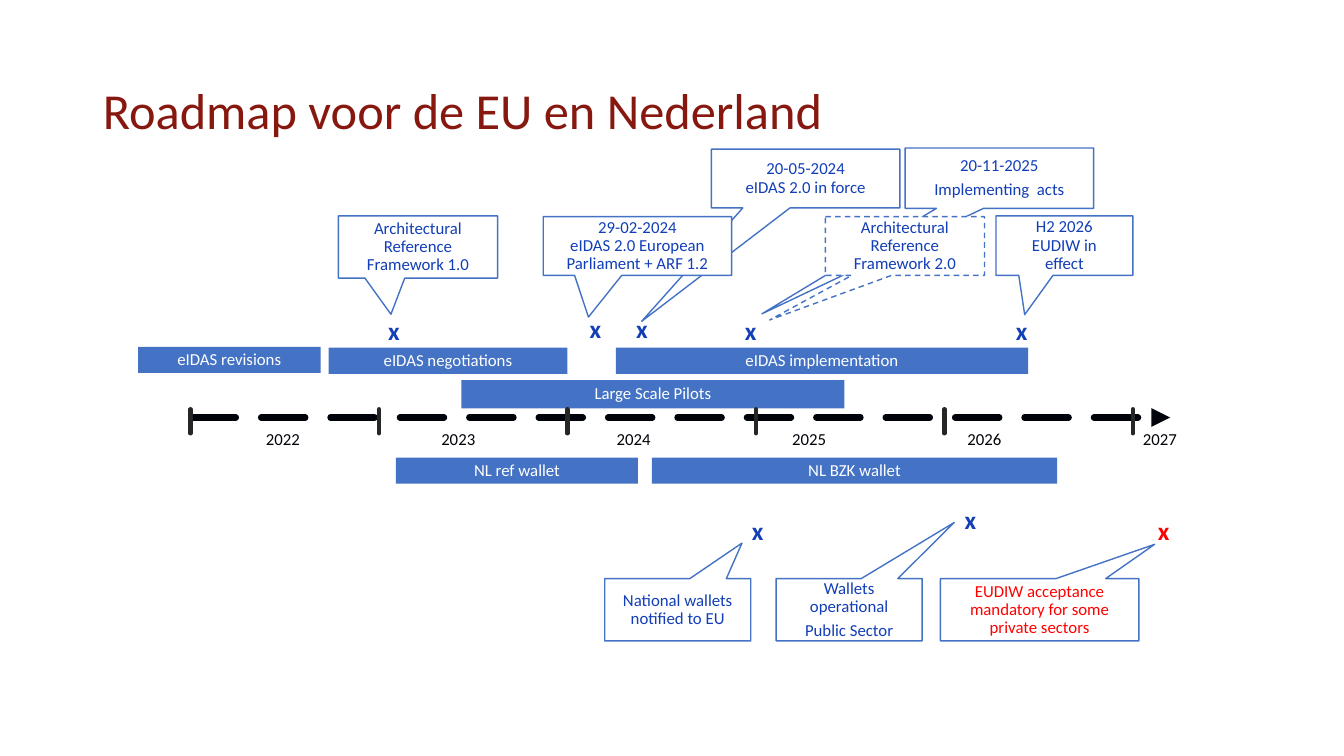
from lxml.etree import SubElement as Sub
from pptx import Presentation
from pptx.dml.color import RGBColor as Rgb
from pptx.enum.dml import MSO_LINE as Dash
from pptx.enum.shapes import MSO_CONNECTOR as Link, MSO_SHAPE as Form
from pptx.enum.text import MSO_ANCHOR as Anchor, PP_ALIGN as Align
from pptx.oxml.ns import qn
from pptx.util import Cm, Pt

HUES = {
    "title": "871810", "bar": "4472C4", "blue": "123EB7", "red": "FF0000",
    "white": "FFFFFF", "ink": "00030A", "tick": "262626",
}


class Board:
    """Holds the style and the current slide."""

    font = "Calibri"
    size = 12

    def __init__(self, slide):
        self.slide = slide
        self.shapes = slide.shapes

    def hue(self, name):
        return Rgb.from_string(HUES[name])

    def text(self, frame, text, hue, size=size, bold=False, gap=2, inset=0.0,
             align=Align.CENTER, anchor=Anchor.MIDDLE):
        frame.text = text
        frame.word_wrap = True
        frame.vertical_anchor = anchor
        frame.margin_left = frame.margin_right = Cm(inset)
        frame.margin_top = frame.margin_bottom = Cm(inset)
        for i, para in enumerate(frame.paragraphs):
            para.alignment = align
            para.line_spacing = 0.9
            para.space_before = Pt(gap if i else 0)
            para.space_after = Pt(gap)
            for run in para.runs:
                font = run.font
                font.name, font.size, font.bold = self.font, Pt(size), bold
                font.color.rgb = self.hue(hue)

    def title(self, text, *box):
        head = self.shapes.title
        head.left, head.top, head.width, head.height = map(Cm, box)
        self.text(head.text_frame, text, "title", 36, gap=0, inset=0.25,
                  align=Align.LEFT)

    def label(self, text, x, y, w, h, hue="ink", **style):
        box = self.shapes.add_textbox(Cm(x), Cm(y), Cm(w), Cm(h))
        self.text(box.text_frame, text, hue, gap=6, anchor=Anchor.TOP, **style)

    def mark(self, x, y, hue="blue"):
        self.label("x", x, y, 0.1, 0.1, hue, size=18, bold=True)

    def shape(self, form, text, box, hue, fill=None):
        item = self.shapes.add_shape(form, *map(Cm, box))
        item.shadow.inherit = False
        if fill:
            item.fill.solid()
            item.fill.fore_color.rgb = self.hue(fill)
        else:
            item.fill.background()
        self.text(item.text_frame, text, hue, inset=0.4)
        return item

    def bar(self, text, *box):
        self.shape(Form.RECTANGLE, text, box, "white", "bar").line.fill.background()

    def callout(self, text, box, tip, hue="blue", fill=None, dash=None):
        item = self.shape(Form.RECTANGULAR_CALLOUT, text, box, hue, fill)
        item.adjustments[0], item.adjustments[1] = tip
        item.line.color.rgb = self.hue("bar")
        item.line.width = Pt(1)
        if dash:
            item.line.dash_style = dash

    def line(self, x1, y1, x2, y2, hue, width, dash=None, arrow=False):
        item = self.shapes.add_connector(Link.STRAIGHT, *map(Cm, (x1, y1, x2, y2)))
        item.line.color.rgb = self.hue(hue)
        item.line.width = Pt(width)
        props = item._element.spPr
        edge = props.get_or_add_ln()
        edge.set("cap", "rnd")
        if dash:
            item.line.dash_style = dash
        if arrow:
            Sub(edge, qn("a:tailEnd"), type="triangle")
        Sub(props, qn("a:effectLst"))


def main():
    deck = Presentation()
    deck.slide_width, deck.slide_height = Cm(33.87), Cm(19.05)
    board = Board(deck.slides.add_slide(deck.slide_layouts[5]))

    # Title
    board.title("Roadmap voor de EU en Nederland", 2.34, 1.02, 29.21, 3.68)

    # Upper row of callouts, behind the rest
    board.callout("20-11-2025\nImplementing  acts",
                  (22.81, 3.73, 4.75, 1.52), (-1.26, 2.25))
    board.callout("20-05-2024\veIDAS 2.0 in force",
                  (17.93, 3.76, 4.75, 1.48), (-0.87, 2.43))

    # Time axis with years
    board.line(4.83, 10.52, 29.49, 10.52, "ink", 4.5, Dash.LONG_DASH, True)
    for i in range(6):
        board.label(str(2022 + i), 4.83 + 4.42 * i, 10.87, 4.6, 0.48)

    # Phases
    for text, x, y, w, h in (
        ("eIDAS revisions", 3.48, 8.74, 4.6, 0.66),
        ("eIDAS negotiations", 8.28, 8.76, 6.02, 0.66),
        ("eIDAS implementation", 15.52, 8.76, 10.39, 0.66),
        ("Large Scale Pilots", 11.63, 9.58, 9.65, 0.71),
        ("NL ref wallet", 9.98, 11.53, 6.1, 0.66),
        ("NL BZK wallet", 16.43, 11.53, 10.21, 0.66),
    ):
        board.bar(text, x, y, w, h)

    # Year ticks
    for i in range(6):
        x = 4.8 + 4.75 * i
        board.line(x, 10.31, x, 10.92, "tick", 3)

    # Milestones above the axis
    board.callout("Architectural Reference Framework 1.0",
                  (8.53, 5.44, 4.01, 1.57), (-0.17, 1.08))
    board.callout("29-02-2024\veIDAS 2.0 European Parliament + ARF 1.2",
                  (13.69, 5.46, 4.75, 1.48), (-0.26, 1.21), fill="white")
    board.callout("Architectural Reference Framework 2.0",
                  (20.8, 5.46, 4.01, 1.48), (-0.85, 1.26),
                  fill="white", dash=Dash.DASH)
    board.callout("H2 2026 EUDIW in effect",
                  (25.1, 5.44, 3.45, 1.5), (-0.29, 1.16))

    # Milestones below the axis
    for text, x, w, tip, hue in (
        ("National wallets notified to EU", 15.24, 3.68, (0.44, -1.07), "blue"),
        ("Wallets operational\nPublic Sector", 19.56, 3.68, (0.72, -1.4), "blue"),
        ("EUDIW acceptance mandatory for some private sectors",
         23.7, 5, (0.58, -1.05), "red"),
    ):
        board.callout(text, (x, 14.58, w, 1.57), tip, hue)

    # Milestone marks
    for x, y in ((9.78, 8.03), (14.86, 7.98), (16.03, 7.98), (18.77, 8.03),
                 (25.6, 8.03), (18.95, 13.08), (24.31, 12.8)):
        board.mark(x, y)
    board.mark(29.18, 13.06, "red")

    deck.save("out.pptx")


if __name__ == "__main__":
    main()
